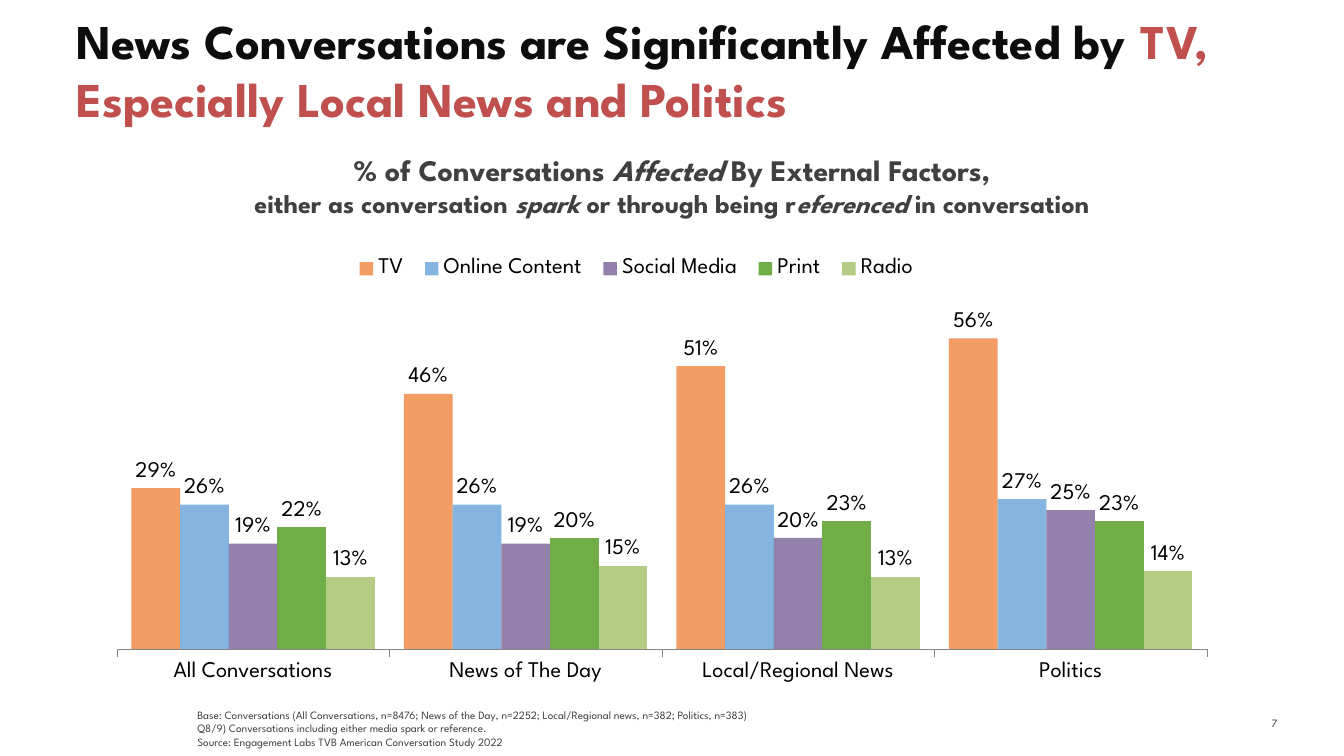
from dataclasses import dataclass

from lxml import etree
from pptx import Presentation
from pptx.chart.data import CategoryChartData
from pptx.dml.color import RGBColor
from pptx.enum.chart import XL_CHART_TYPE, XL_LABEL_POSITION, XL_LEGEND_POSITION, XL_TICK_MARK
from pptx.enum.text import MSO_ANCHOR, PP_ALIGN
from pptx.oxml.ns import qn
from pptx.util import Inches, Pt

COLUMNS = XL_CHART_TYPE.COLUMN_CLUSTERED
OUTSIDE_END = XL_LABEL_POSITION.OUTSIDE_END
LEGEND_TOP = XL_LEGEND_POSITION.TOP
TICK_OUTSIDE, TICK_NONE = XL_TICK_MARK.OUTSIDE, XL_TICK_MARK.NONE
LEFT, CENTER, RIGHT = PP_ALIGN.LEFT, PP_ALIGN.CENTER, PP_ALIGN.RIGHT
TOP, MIDDLE, BOTTOM = MSO_ANCHOR.TOP, MSO_ANCHOR.MIDDLE, MSO_ANCHOR.BOTTOM


@dataclass(frozen=True)
class Theme:
    font: str = "League Spartan"
    title: str = "0D0D0D"
    accent: str = "C0504D"
    body: str = "404040"
    number: str = "3C3C3A"
    chart_text: str = "000000"
    axis: str = "868686"
    title_size: int = 26
    heading_size: int = 16
    subheading_size: int = 14
    chart_size: int = 12
    number_gap_size: int = 8
    note_size: int = 6


CATEGORIES = ["All Conversations", "News of The Day", "Local/Regional News", "Politics"]

# name, values, colour, opacity in percent
SERIES = [
    ("TV", (0.29, 0.46, 0.51, 0.56), "ED7D31", 75),
    ("Online Content", (0.26, 0.26, 0.26, 0.27), "5B9BD5", 75),
    ("Social Media", (0.19, 0.19, 0.20, 0.25), "71588F", 75),
    ("Print", (0.22, 0.20, 0.23, 0.23), "70AD47", 100),
    ("Radio", (0.13, 0.15, 0.13, 0.14), "B4CC83", 100),
]

# left, top, width, height in inches; the last two are measured inside the chart
CHART_BOX = (0.5, 1.73, 8.52, 3.59)
PLOT_BOX = (0.37, 0.21, 8.11, 2.89)
LEGEND_BOX = (2.07, 0.12, 4.33, 0.3)

NOTES = [
    "Base: Conversations (All Conversations, n=8476; News of the Day, n=2252; "
    "Local/Regional news, n=382; Politics, n=383)",
    "Q8/9) Conversations including either media spark or reference.",
    "Source: Engagement Labs TVB American Conversation Study 2022",
]


def set_layout(element, index, box, chart_box, **options):
    """Place a chart part by its box in inches inside the chart."""
    for old in element.findall(qn("c:layout")):
        element.remove(old)
    layout = etree.Element(qn("c:layout"))
    manual = etree.SubElement(layout, qn("c:manualLayout"))
    fractions = [length / chart_box[2 + i % 2] for i, length in enumerate(box)]
    values = {**options, "xMode": "edge", "yMode": "edge", **dict(zip("xywh", fractions))}
    for name, value in values.items():
        etree.SubElement(manual, qn(f"c:{name}")).set("val", str(value))
    element.insert(index, layout)


class SlideBuilder:
    def __init__(self, slide, theme):
        self.slide = slide
        self.theme = theme

    def style(self, font, size, color, bold=None):
        font.name = self.theme.font
        font.size = Pt(size)
        font.bold = bold
        font.color.rgb = RGBColor.from_string(color)

    def text_box(self, box, anchor=TOP, wrap=True, top_inset=0.05):
        tf = self.slide.shapes.add_textbox(*map(Inches, box)).text_frame
        tf.word_wrap = wrap
        tf.vertical_anchor = anchor
        tf.margin_top = Inches(top_inset)
        return tf

    def paragraph(self, tf, runs, size, color, align=LEFT, bold=None):
        """Fill the empty first paragraph or add one; return its runs."""
        p = tf.paragraphs[0] if not tf.paragraphs[0].runs else tf.add_paragraph()
        p.alignment = align
        self.style(p.font, size, color, bold)
        for text in runs:
            r = p.add_run()
            r.text = text
        return p.runs

    def emphasised(self, tf, runs, size):
        """Add a centred bold line in which every second run is italic."""
        line = self.paragraph(tf, runs, size, self.theme.body, CENTER, True)
        for r in line[1::2]:
            r.font.italic = True

    def column_chart(self, box, categories, series):
        t = self.theme
        data = CategoryChartData(number_format="0%")
        data.categories = categories
        for name, values, _, _ in series:
            data.add_series(name, values)
        chart = self.slide.shapes.add_chart(COLUMNS, *map(Inches, box), data).chart
        self.style(chart.font, t.chart_size, t.chart_text)
        chart.has_title = False

        chart.has_legend = True
        chart.legend.position = LEGEND_TOP
        chart.legend.include_in_layout = False
        self.style(chart.legend.font, t.chart_size, t.chart_text)
        set_layout(chart.legend._element, 1, LEGEND_BOX, box)

        values = chart.value_axis
        values.minimum_scale, values.maximum_scale = 0, 0.7
        values.has_major_gridlines = False
        values.visible = False
        axis = chart.category_axis
        axis.major_tick_mark, axis.minor_tick_mark = TICK_OUTSIDE, TICK_NONE
        axis.format.line.color.rgb = RGBColor.from_string(t.axis)
        axis.format.line.width = Pt(0.25)
        self.style(axis.tick_labels.font, t.chart_size, t.chart_text)

        plot = chart.plots[0]
        plot.gap_width, plot.overlap = 60, 0
        plot.vary_by_categories = False
        for column, (_, _, color, opacity) in zip(plot.series, series):
            self.fill_column(column, color, opacity)
            labels = column.data_labels
            labels.show_value = True
            labels.number_format, labels.number_format_is_linked = "0%", False
            labels.position = OUTSIDE_END
            self.style(labels.font, t.chart_size, t.chart_text)
        plot_area = chart._chartSpace.find(f".//{qn('c:plotArea')}")
        set_layout(plot_area, 0, PLOT_BOX, box, layoutTarget="inner")

    def fill_column(self, column, color, opacity):
        fill = column.format.fill
        fill.solid()
        fill.fore_color.rgb = RGBColor.from_string(color)
        if opacity < 100:
            rgb = column._element.find(f".//{qn('a:srgbClr')}")
            etree.SubElement(rgb, qn("a:alpha")).set("val", str(opacity * 1000))


def main():
    prs = Presentation()
    prs.slide_width = Inches(10)
    prs.slide_height = prs.slide_width * 9 // 16
    t = Theme()
    s = SlideBuilder(prs.slides.add_slide(prs.slide_layouts[6]), t)

    number = s.text_box((9.04, 5.22, 0.59, 0.3), MIDDLE)
    runs = s.paragraph(number, ["7", " "], t.note_size, t.number, RIGHT)
    runs[1].font.size = Pt(t.number_gap_size)

    title = s.text_box((0.47, 0.08, 8.89, 0.94), top_inset=0)
    runs = s.paragraph(
        title,
        ["News Conversations are Significantly Affected by",
         " TV, Especially Local News and Politics"],
        t.title_size, t.title, bold=True)
    runs[1].font.color.rgb = RGBColor.from_string(t.accent)

    notes = s.text_box((1.37, 5.22, 8.13, 0.4), BOTTOM)
    for note in NOTES:
        s.paragraph(notes, [note], t.note_size, t.body)

    s.column_chart(CHART_BOX, CATEGORIES, SERIES)

    heading = s.text_box((1.43, 1.08, 7.14, 0.61), wrap=False)
    s.emphasised(heading, ["% of Conversations ", "Affected", " By External Factors,"],
                 t.heading_size)
    s.emphasised(heading, ["either as conversation ", "spark", " or through being r",
                           "eferenced", " in conversation"], t.subheading_size)

    prs.save("out.pptx")


if __name__ == "__main__":
    main()
